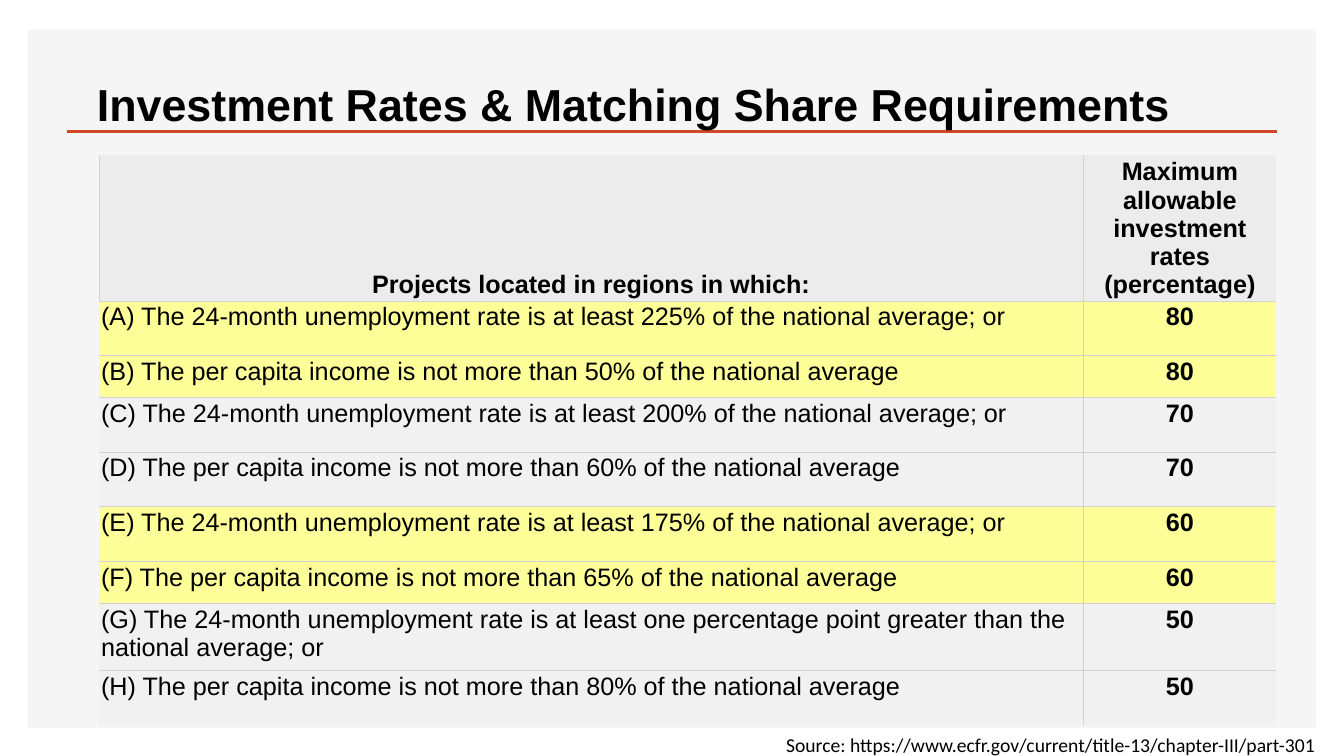
from pptx import Presentation
from pptx.dml.color import RGBColor
from pptx.enum.shapes import MSO_CONNECTOR, MSO_SHAPE
from pptx.enum.text import MSO_ANCHOR, MSO_AUTO_SIZE, PP_ALIGN
from pptx.oxml.ns import qn
from pptx.util import Pt
from lxml.etree import SubElement

COLORS = {
    "panel": "F5F5F5",
    "accent": "D24726",
    "text": "000000",
    "header": "ECECEC",
    "yellow": "FFFF99",
    "gray": "F1F1F1",
    "border": "D1D2D4",
}


def add_text(paragraph, text, size, font="Arial", bold=False):
    run = paragraph.add_run()
    run.text = text
    run.font.size = Pt(size)
    run.font.name = font
    run.font.bold = bold
    run.font.color.rgb = RGBColor.from_string(COLORS["text"])


def set_borders(cell, visible_sides):
    properties = cell._tc.get_or_add_tcPr()
    for position, side in enumerate("LRTB"):
        line = SubElement(properties, qn(f"a:ln{side}"), w=str(Pt(0.38)))
        if side in visible_sides:
            fill = SubElement(line, qn("a:solidFill"))
            SubElement(fill, qn("a:srgbClr"), val=COLORS["border"])
        else:
            SubElement(line, qn("a:noFill"))
        properties.insert(position, line)


presentation = Presentation()
presentation.slide_width = Pt(960)
presentation.slide_height = Pt(540)
slide = presentation.slides.add_slide(presentation.slide_layouts[5])

# Background panel
panel = slide.shapes.add_shape(MSO_SHAPE.RECTANGLE, Pt(20), Pt(21), Pt(920), Pt(499))
panel.shadow.inherit = False
panel.fill.solid()
panel.fill.fore_color.rgb = RGBColor.from_string(COLORS["panel"])
panel.line.fill.background()

# Rule under the title
rule = slide.shapes.add_connector(
    MSO_CONNECTOR.STRAIGHT, Pt(47.8), Pt(94), Pt(912), Pt(94))
rule.line.color.rgb = RGBColor.from_string(COLORS["accent"])
rule.line.width = Pt(2)
SubElement(rule.element.spPr, qn("a:effectLst"))

# Title, in front of the panel and rule
title = slide.shapes.title
title.left, title.top, title.width, title.height = Pt(62), Pt(24.2), Pt(828), Pt(104.4)
title.text_frame.vertical_anchor = MSO_ANCHOR.MIDDLE
title.text_frame.auto_size = MSO_AUTO_SIZE.NONE
title_paragraph = title.text_frame.paragraphs[0]
title_paragraph.alignment = PP_ALIGN.LEFT
title_paragraph.line_spacing = 0.9
add_text(title_paragraph, "Investment Rates & Matching Share Requirements", 32, bold=True)
rule.element.addnext(title.element)

# Investment rate table: text, rate, row height, fill
UNEMPLOYMENT = "The 24-month unemployment rate is at least"
INCOME = "The per capita income is not more than"
AVERAGE = "of the national average"
rows = [
    ("Projects located in regions in which:",
     "Maximum\nallowable\ninvestment rates\n(percentage)", 104, "header"),
    (f"(A) {UNEMPLOYMENT} 225% {AVERAGE}; or", "80", 39, "yellow"),
    (f"(B) {INCOME} 50% {AVERAGE}", "80", 30, "yellow"),
    (f"(C) {UNEMPLOYMENT} 200% {AVERAGE}; or", "70", 39, "gray"),
    (f"(D) {INCOME} 60% {AVERAGE}", "70", 39, "gray"),
    (f"(E) {UNEMPLOYMENT} 175% {AVERAGE}; or", "60", 39, "yellow"),
    (f"(F) {INCOME} 65% {AVERAGE}", "60", 30, "yellow"),
    (f"(G) {UNEMPLOYMENT} one percentage point greater than the national average; or",
     "50", 48, "gray"),
    (f"(H) {INCOME} 80% {AVERAGE}", "50", 39, "gray"),
]
table_height = sum(row[2] for row in rows)
table = slide.shapes.add_table(
    len(rows), 2, Pt(70.8), Pt(111), Pt(841), Pt(table_height)).table
table.columns[0].width = Pt(703)
table.columns[1].width = Pt(138)

for row_index, (condition, rate, height, fill) in enumerate(rows):
    table.rows[row_index].height = Pt(height)
    is_header = row_index == 0
    for column_index, text in enumerate((condition, rate)):
        cell = table.cell(row_index, column_index)
        cell.margin_left = cell.margin_right = Pt(1.4)
        cell.margin_top = cell.margin_bottom = Pt(1.4)
        cell.vertical_anchor = MSO_ANCHOR.BOTTOM if is_header else MSO_ANCHOR.TOP
        cell.fill.solid()
        cell.fill.fore_color.rgb = RGBColor.from_string(COLORS[fill])

        sides = "R" if column_index == 0 else "L"
        if is_header:
            sides += "L"
        else:
            sides += "T"
        if row_index < len(rows) - 1:
            sides += "B"
        set_borders(cell, sides)

        paragraph = cell.text_frame.paragraphs[0]
        centered = is_header or column_index == 1
        paragraph.alignment = PP_ALIGN.CENTER if centered else PP_ALIGN.LEFT
        for line_index, line_text in enumerate(text.split("\n")):
            if line_index:
                paragraph.add_line_break()
            add_text(paragraph, line_text, 18, bold=centered)

# Source note
source = slide.shapes.add_textbox(Pt(554.4), Pt(520), Pt(396.7), Pt(24.2))
source.text_frame.word_wrap = False
source.text_frame.auto_size = MSO_AUTO_SIZE.SHAPE_TO_FIT_TEXT
add_text(source.text_frame.paragraphs[0],
         "Source: https://www.ecfr.gov/current/title-13/chapter-III/part-301", 14, "Calibri")

presentation.save("out.pptx")
